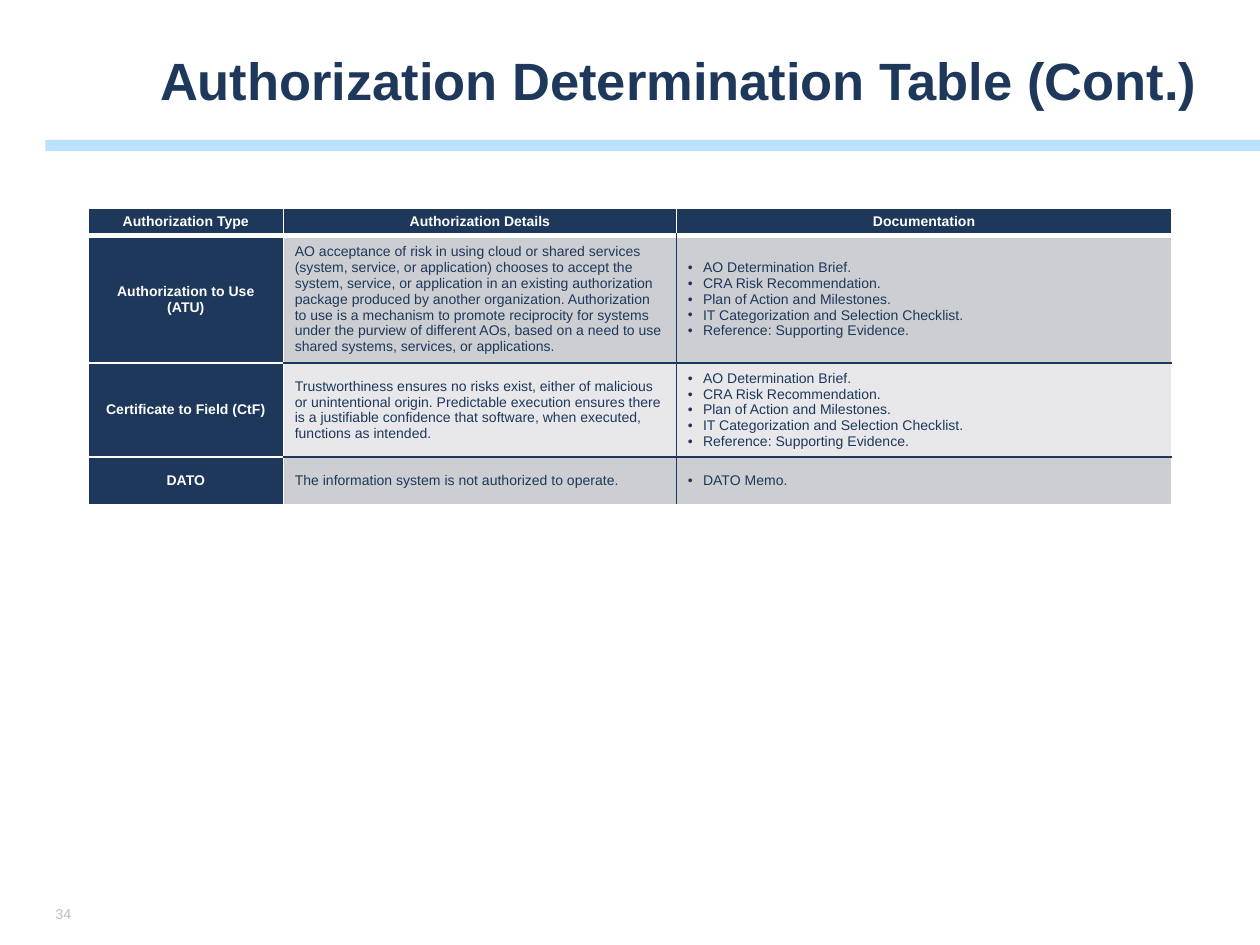
from lxml import etree
from pptx import Presentation
from pptx.dml.color import RGBColor
from pptx.enum.shapes import MSO_SHAPE
from pptx.enum.text import MSO_ANCHOR, MSO_AUTO_SIZE, PP_ALIGN
from pptx.oxml.ns import qn
from pptx.util import Inches, Pt

RECT = MSO_SHAPE.RECTANGLE
MIDDLE = MSO_ANCHOR.MIDDLE
NO_FIT = MSO_AUTO_SIZE.NONE
LEFT, CENTER = PP_ALIGN.LEFT, PP_ALIGN.CENTER
NAVY, WHITE, GRAY, PALE = "1D385B", "FFFFFF", "CDCED2", "E8E8EA"
SKY, MUTED = "65BAF5", "BFBFBF"


def rgb(color):
    return RGBColor.from_string(color)


def add_run(p, text, size, color, bold=False):
    r = p.add_run()
    r.text = text
    r.font.name = "Arial"
    r.font.size = Pt(size)
    r.font.bold = bold
    r.font.color.rgb = rgb(color)


prs = Presentation()
prs.slide_width, prs.slide_height = Inches(10), Inches(7.5)
s = prs.slides.add_slide(prs.slide_layouts[5])

bar = s.shapes.add_shape(RECT, Inches(0.36), Inches(1.11), Inches(9.64), Inches(0.09))
bar.shadow.inherit = False
bar.fill.solid()
bar.fill.fore_color.rgb = rgb(SKY)
bar.line.fill.background()
clr = bar.fill._xPr.find(qn("a:solidFill"))[0]
etree.SubElement(clr, qn("a:alpha"), val="43000")

num = s.shapes.add_textbox(Inches(0.37), Inches(7.12), Inches(0.32), Inches(0.26))
tf = num.text_frame
tf.word_wrap = True
tf.vertical_anchor = MIDDLE
tf.margin_left = tf.margin_right = Inches(0.07)
tf.margin_top = tf.margin_bottom = Inches(0.04)
add_run(tf.paragraphs[0], "34", 8.2, MUTED)

title = s.shapes.title
title.left, title.top = Inches(1.17), Inches(0.33)
title.width, title.height = Inches(8.61), Inches(0.67)
tf = title.text_frame
tf.auto_size = NO_FIT
tf.vertical_anchor = MIDDLE
p = tf.paragraphs[0]
p.alignment = LEFT
p.line_spacing = 0.9
add_run(p, "Authorization Determination Table (Cont.)", 30, NAVY, True)

evidence = [
    "AO Determination Brief.",
    "CRA Risk Recommendation.",
    "Plan of Action and Milestones.",
    "IT Categorization and Selection Checklist.",
    "Reference: Supporting Evidence.",
]
rows = [
    [["Authorization Type"], ["Authorization Details"], ["Documentation"]],
    [
        ["Authorization to Use", "(ATU)"],
        ["AO acceptance of risk in using cloud or shared services (system, service, "
         "or application) chooses to accept the system, service, or application in an "
         "existing authorization package produced by another organization. "
         "Authorization to use is a mechanism to promote reciprocity for systems under "
         "the purview of different AOs, based on a need to use shared systems, "
         "services, or applications."],
        evidence,
    ],
    [
        ["Certificate to Field (CtF)"],
        ["Trustworthiness ensures no risks exist, either of malicious or unintentional "
         "origin. Predictable execution ensures there is a justifiable confidence that "
         "software, when executed, functions as intended."],
        evidence,
    ],
    [["DATO"], ["The information system is not authorized to operate."], ["DATO Memo."]],
]
widths = [1.55, 3.12, 3.93]
heights = [0.22, 0.96, 0.71, 0.38]
last = len(rows) - 1

frame = s.shapes.add_table(len(rows), len(widths), Inches(0.7), Inches(1.65),
                           Inches(sum(widths)), Inches(sum(heights)))
table = frame.table
table.horz_banding = False
for col, width in zip(table.columns, widths):
    col.width = Inches(width)
for row, height in zip(table.rows, heights):
    row.height = Inches(height)

for i, row in enumerate(rows):
    for j, texts in enumerate(row):
        cell = table.cell(i, j)
        label = i == 0 or j == 0
        borders = {
            "a:lnL": (NAVY if i > 0 and j == 2 else WHITE, 1),
            "a:lnR": (NAVY if i > 0 and j == 1 else WHITE, 1),
            "a:lnT": (NAVY if i > 1 and j > 0 else WHITE, 3 if i == 1 else 1),
            "a:lnB": (NAVY if 0 < i < last and j > 0 else WHITE, 3 if i == 0 else 1),
        }
        tcPr = cell._tc.get_or_add_tcPr()
        for tag, (color, width) in borders.items():
            ln = etree.SubElement(tcPr, qn(tag), w=str(Pt(width)))
            fill = etree.SubElement(ln, qn("a:solidFill"))
            etree.SubElement(fill, qn("a:srgbClr"), val=color)
        cell.fill.solid()
        cell.fill.fore_color.rgb = rgb(NAVY if label else GRAY if i % 2 else PALE)
        if i == last and not label:
            cell.fill.fore_color.rgb = rgb(GRAY)
        cell.vertical_anchor = MIDDLE
        cell.margin_left = cell.margin_right = Inches(0.09)
        cell.margin_top = cell.margin_bottom = Inches(0.04)
        tf = cell.text_frame
        for k, text in enumerate(texts):
            p = tf.paragraphs[0] if k == 0 else tf.add_paragraph()
            p.alignment = CENTER if label else LEFT
            if j == 2 and not label:
                pPr = p._p.get_or_add_pPr()
                pPr.set("marL", str(Inches(0.12)))
                pPr.set("indent", str(-Inches(0.12)))
                etree.SubElement(pPr, qn("a:buFont"), typeface="Arial")
                etree.SubElement(pPr, qn("a:buChar"), char="•")
            add_run(p, text, 8, WHITE if label else NAVY, label)

prs.save("out.pptx")
